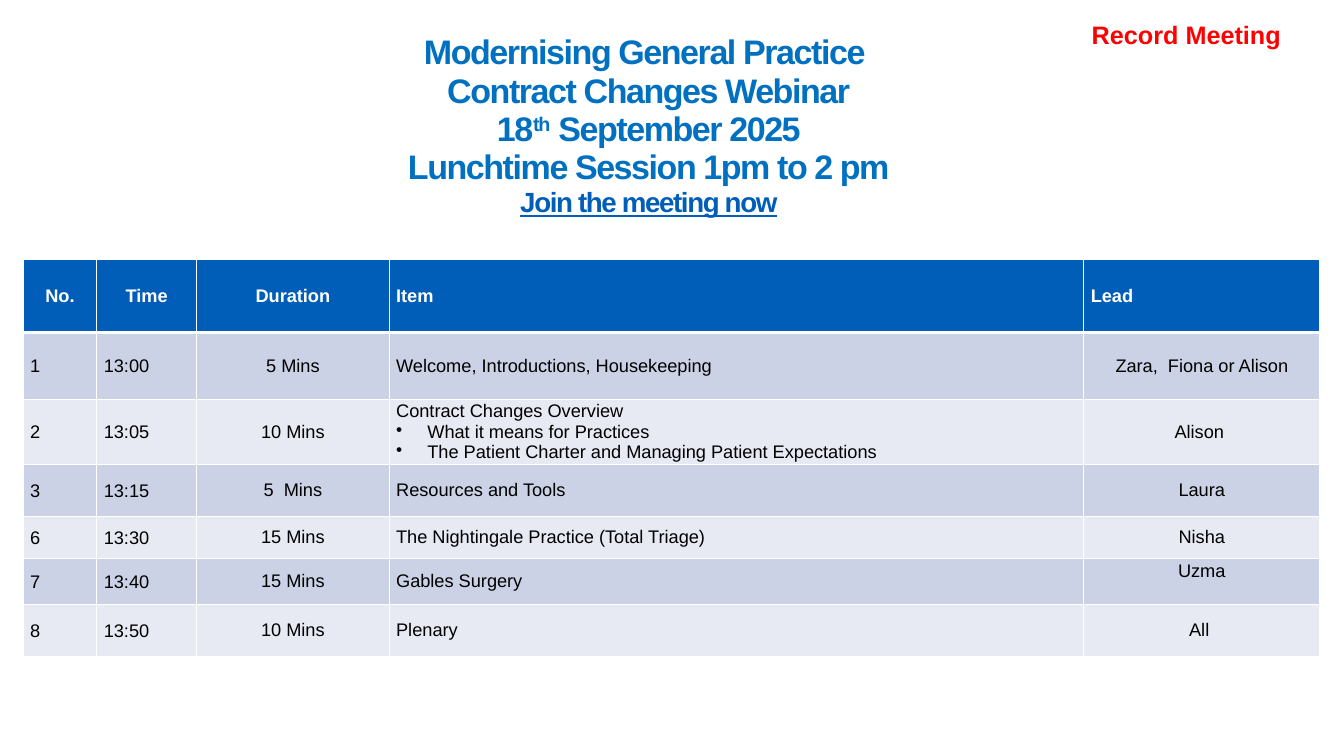
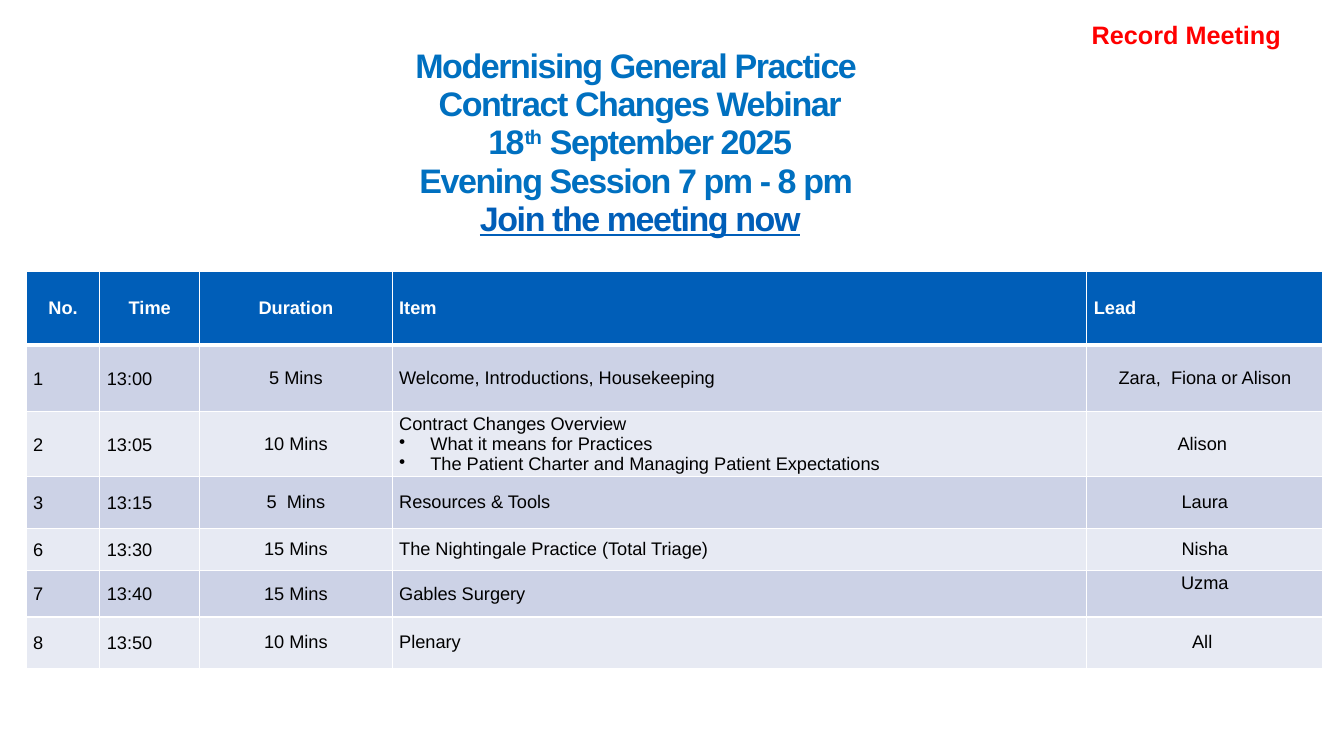
import pptx
import pptx.dml.color
import pptx.enum.text
import pptx.oxml
import pptx.oxml.ns
import pptx.util
from dataclasses import dataclass

Inches, Pt = pptx.util.Inches, pptx.util.Pt
RGB = pptx.dml.color.RGBColor.from_string
PP_ALIGN = pptx.enum.text.PP_ALIGN
MIDDLE = pptx.enum.text.MSO_ANCHOR.MIDDLE


@dataclass(frozen=True)
class Theme:
    font: str = "Arial"
    title: str = "0070C0"
    link: str = "005EB8"
    header: str = "005EB8"
    bands: tuple = ("CCD2E6", "E7EAF3")
    white: str = "FFFFFF"
    text: str = "000000"
    alert: str = "FF0000"
    title_size: float = 24.3
    alert_size: float = 18
    table_size: float = 13


THEME = Theme()

HEADER = ("No.", "Time", "Duration", "Item", "Lead")
COLUMN_WIDTHS = (0.73, 0.99, 1.91, 6.89, 2.34)
ROW_HEIGHTS = (0.73, 0.66, 0.63, 0.51, 0.42, 0.46, 0.51)
HEADER_CENTRED = (0, 1, 2)
BODY_CENTRED = (2, 4)
LOOSE_COLUMNS = (0, 1)
RAISED_LEAD = "Uzma"

OVERVIEW = (
    "Contract Changes Overview",
    "What it means for Practices",
    "The Patient Charter and Managing Patient Expectations",
)


def agenda(resources):
    return [
        ("1", "13:00", "5 Mins", "Welcome, Introductions, Housekeeping", "Zara,  Fiona or Alison"),
        ("2", "13:05", "10 Mins", OVERVIEW, "Alison "),
        ("3", "13:15", "5  Mins", resources, "Laura"),
        ("6", "13:30", "15 Mins", "The Nightingale Practice (Total Triage)", "Nisha"),
        ("7", "13:40", "15 Mins", "Gables Surgery", RAISED_LEAD),
        ("8", "13:50", "10 Mins", "Plenary", "All "),
    ]


SESSIONS = [
    {"session": "Lunchtime Session 1pm to 2 pm", "link_size": 19.8,
     "title_box": (0, 0.34, 12.87, 1.75), "table_at": (0.23, 2.57),
     "rows": agenda("Resources and Tools")},
    {"session": "Evening Session 7 pm - 8 pm ", "link_size": THEME.title_size,
     "title_box": (0, 0.47, 12.7, 1.75), "table_at": (0.26, 2.69),
     "rows": agenda("Resources & Tools")},
]


def style(r, size, colour, bold=False):
    r.font.name = THEME.font
    r.font.size = Pt(size)
    r.font.bold = bold
    r.font.color.rgb = RGB(colour)


def add_text_box(s, left, top, width, height):
    tf = s.shapes.add_textbox(Inches(left), Inches(top), Inches(width), Inches(height)).text_frame
    tf.word_wrap = True
    return tf


def add_title(s, session, link_size, box):
    tf = add_text_box(s, *box)
    tf.margin_left = tf.margin_right = tf.margin_top = tf.margin_bottom = 0
    lines = [
        ("Modernising General Practice ",),
        ("Contract Changes Webinar",),
        ("18", "th", " September 2025"),
        (session,),
        ("Join the meeting now",),
    ]
    for i, pieces in enumerate(lines):
        p = tf.paragraphs[0] if i == 0 else tf.add_paragraph()
        p.alignment = PP_ALIGN.CENTER
        p.line_spacing = 0.94
        is_link = i == len(lines) - 1
        for piece in pieces:
            r = p.add_run()
            r.text = piece
            style(r, link_size if is_link else THEME.title_size,
                  THEME.link if is_link else THEME.title, bold=True)
            r.font.underline = is_link
            props = r.font._element
            props.set("spc", "-100")
            if piece == "th":
                props.set("baseline", "30000")


def set_borders(cell, top, bottom):
    """White borders: 1 pt at the sides, the given widths above and below."""
    props = cell._tc.get_or_add_tcPr()
    widths = {"lnL": 1, "lnR": 1, "lnT": top, "lnB": bottom}
    for i, (tag, width) in enumerate(widths.items()):
        props.insert(i, pptx.oxml.parse_xml(
            f'<a:{tag} {pptx.oxml.ns.nsdecls("a")} w="{Pt(width)}"><a:solidFill>'
            f'<a:srgbClr val="{THEME.white}"/></a:solidFill></a:{tag}>'))


def add_bullet(p):
    props = p._p.get_or_add_pPr()
    props.set("marL", str(Inches(0.31)))
    props.set("indent", str(-Inches(0.31)))
    props.append(pptx.oxml.parse_xml(f'<a:buChar {pptx.oxml.ns.nsdecls("a")} char="•"/>'))


def fill_cell(cell, content, row, col):
    is_header = row == 0
    cell.fill.solid()
    cell.fill.fore_color.rgb = RGB(THEME.header if is_header else THEME.bands[(row - 1) % 2])
    set_borders(cell, top=3 if row == 1 else 1, bottom=3 if is_header else 1)
    cell.vertical_anchor = MIDDLE
    cell.margin_left = cell.margin_right = Inches(0.07)
    cell.margin_top = 0
    cell.margin_bottom = Inches(0.2 if content == RAISED_LEAD else 0)
    lines = (content,) if isinstance(content, str) else content
    cell.text_frame.text = "\n".join(lines)
    centred = HEADER_CENTRED if is_header else BODY_CENTRED
    for i, p in enumerate(cell.text_frame.paragraphs):
        p.alignment = PP_ALIGN.CENTER if col in centred else PP_ALIGN.LEFT
        if col in LOOSE_COLUMNS:
            p.line_spacing = 1.07
        if i > 0:
            add_bullet(p)
        for r in p.runs:
            style(r, THEME.table_size, THEME.white if is_header else THEME.text, bold=is_header)


def add_agenda(s, left, top, rows):
    table = s.shapes.add_table(
        len(rows) + 1, len(HEADER), Inches(left), Inches(top),
        Inches(sum(COLUMN_WIDTHS)), Inches(sum(ROW_HEIGHTS))).table
    table.horz_banding = False
    for column, width in zip(table.columns, COLUMN_WIDTHS):
        column.width = Inches(width)
    for row, height in zip(table.rows, ROW_HEIGHTS):
        row.height = Inches(height)
    for i, contents in enumerate([HEADER, *rows]):
        for j, content in enumerate(contents):
            fill_cell(table.cell(i, j), content, i, j)


def add_record_reminder(s):
    tf = add_text_box(s, 10.73, 0.14, 2.4, 0.4)
    tf.text = "Record Meeting"
    style(tf.paragraphs[0].runs[0], THEME.alert_size, THEME.alert, bold=True)


def main():
    prs = pptx.Presentation()
    prs.slide_width, prs.slide_height = Inches(13.33), Inches(7.5)
    for session in SESSIONS:
        s = prs.slides.add_slide(prs.slide_layouts[6])
        add_title(s, session["session"], session["link_size"], session["title_box"])
        add_agenda(s, *session["table_at"], session["rows"])
        add_record_reminder(s)
    prs.save("out.pptx")


if __name__ == "__main__":
    main()
